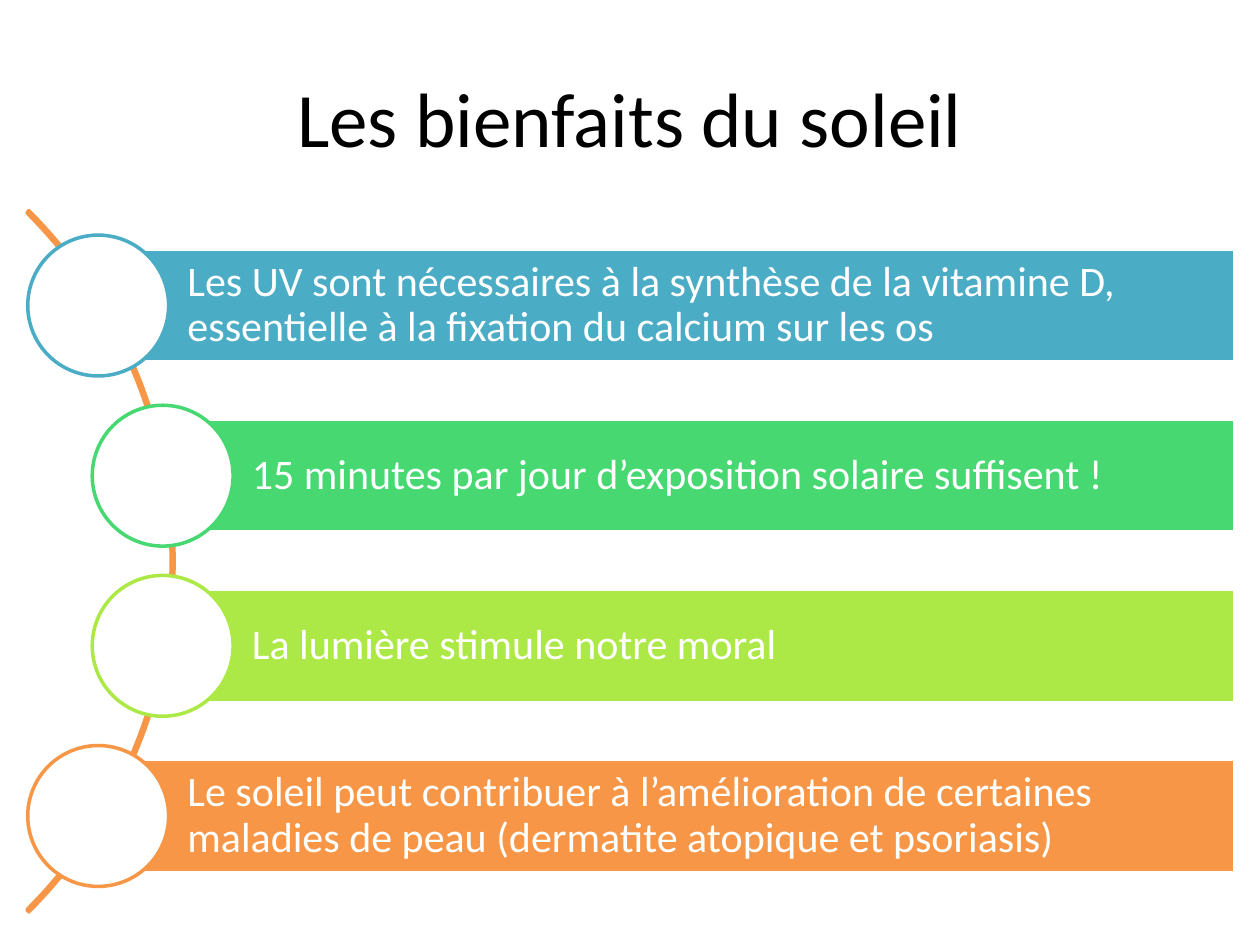
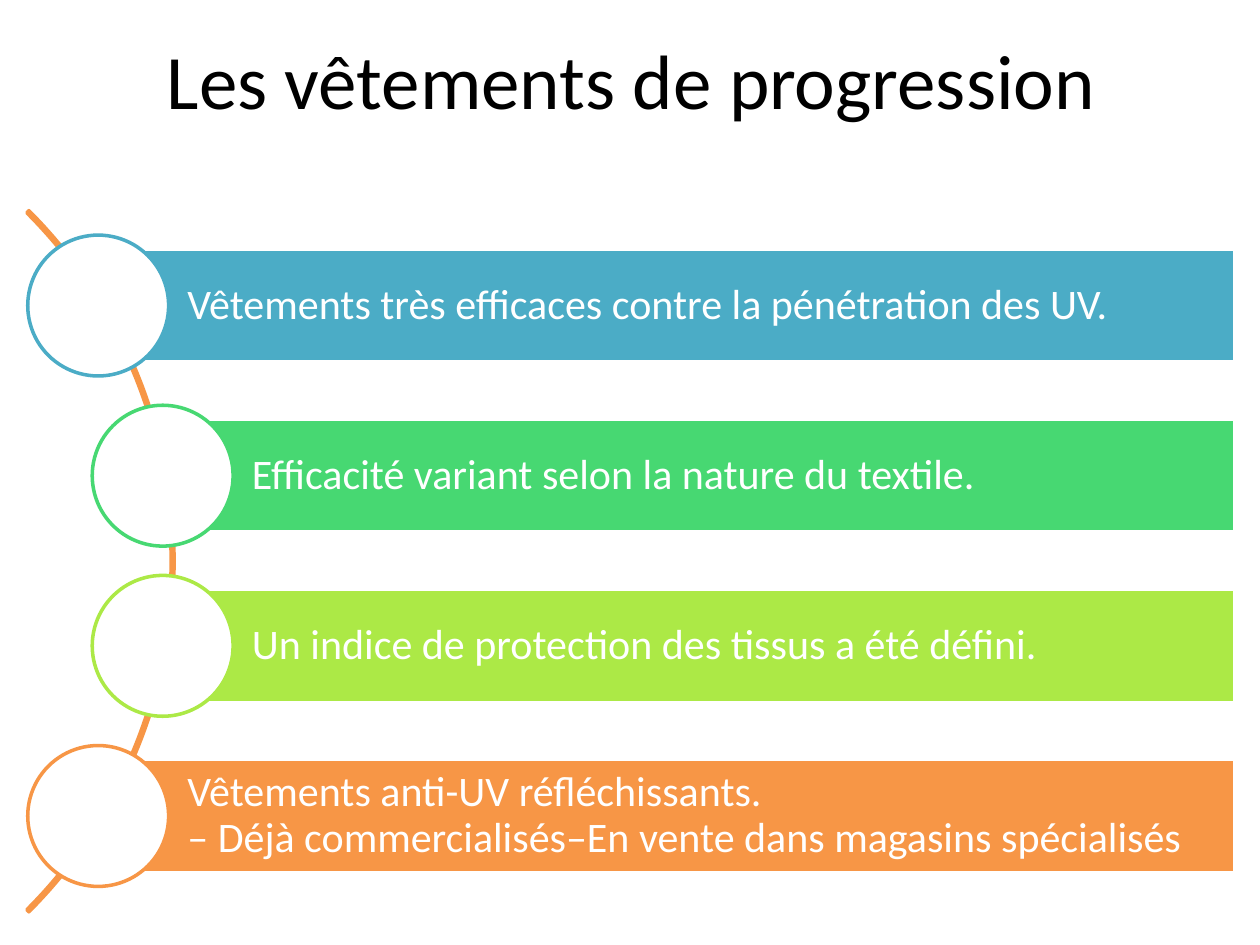
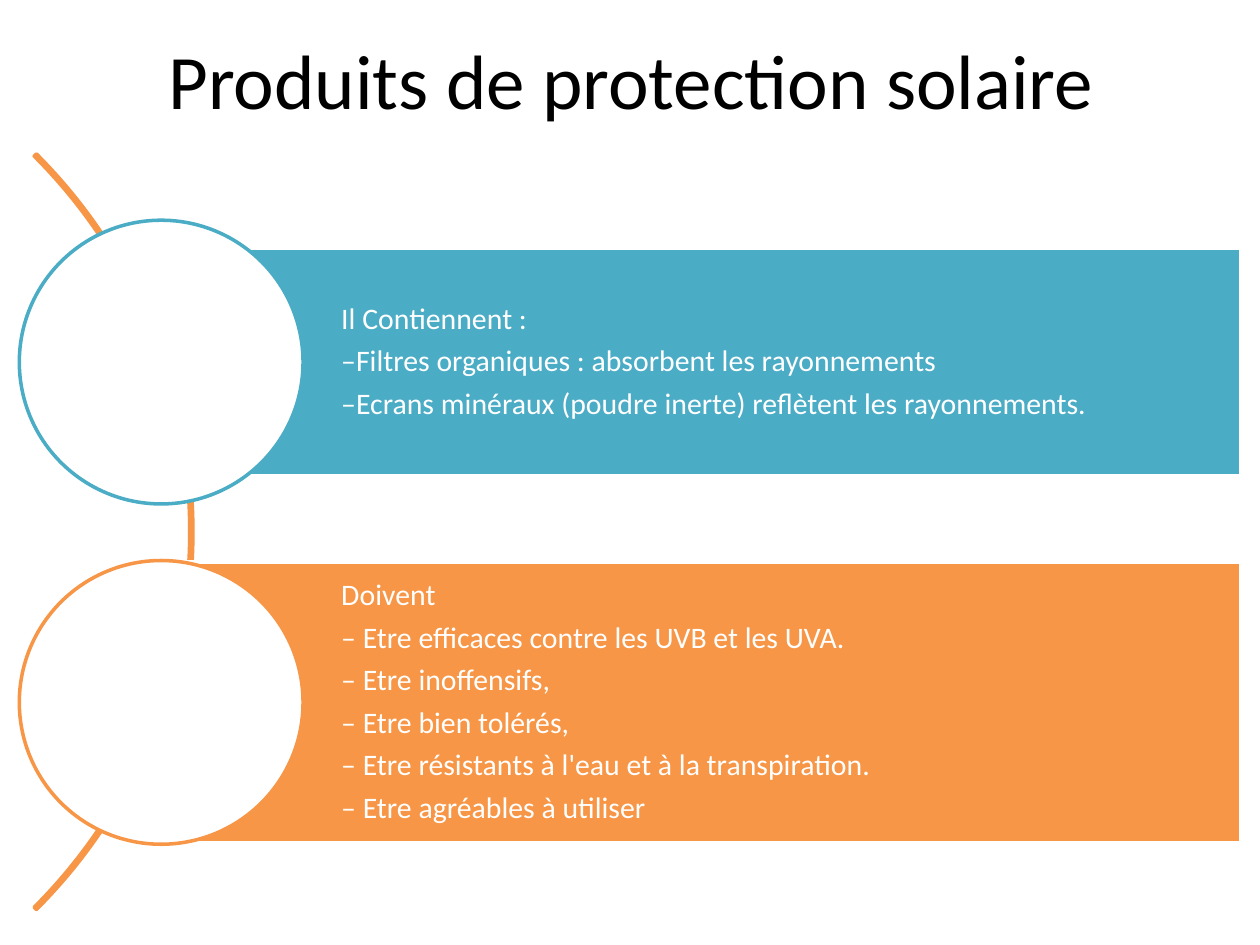
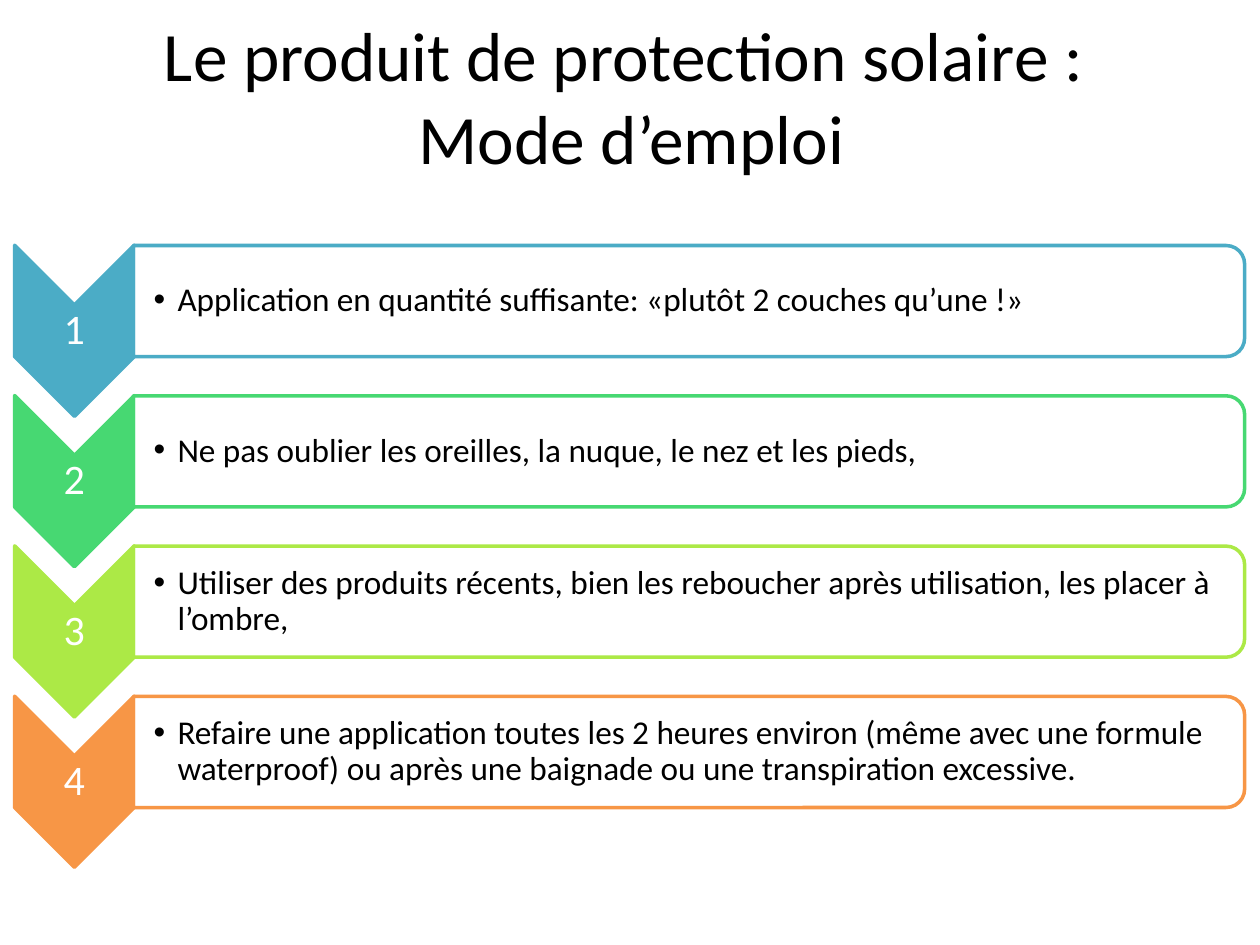
from lxml.etree import SubElement
from pptx import Presentation
from pptx.dml.color import RGBColor
from pptx.enum.shapes import MSO_SHAPE
from pptx.enum.text import MSO_ANCHOR, PP_ALIGN
from pptx.oxml.ns import qn
from pptx.util import Cm, Pt

BLACK = RGBColor(0x00, 0x00, 0x00)
WHITE = RGBColor(0xFF, 0xFF, 0xFF)
BLUE = RGBColor(0x4B, 0xAC, 0xC6)
GREEN = RGBColor(0x47, 0xD8, 0x72)
LIME = RGBColor(0xAC, 0xE9, 0x46)
ORANGE = RGBColor(0xF7, 0x96, 0x46)
HUES = [BLUE, GREEN, LIME, ORANGE]

SIDES = ("margin_left", "margin_top", "margin_right", "margin_bottom")

# Lengths in cm; "mids" are the circle centres across, "tall" the band heights.
FOUR = dict(arc=(-16.48, 1.32, 19.99), disc=2.84, mids=[1.98, 3.28, 3.28, 1.98],
            top=6.16, step=3.43, tall=[2.28] * 4, right=24.89,
            pads=(1.8, 0.18, 0.18, 0.18), size=24, hues=HUES)
TWO = dict(arc=(-17.65, -0.05, 21.54), disc=5.72, mids=[3.25, 3.25],
           top=7.3, step=6.86, tall=[4.57, 5.66], right=25.02,
           pads=(3.63, 0.13, 0.13, 0.13), size=17, hues=[BLUE, ORANGE])

SUN = ["Les UV sont nécessaires à la synthèse de la vitamine D, "
       "essentielle à la fixation du calcium sur les os",
       "15 minutes par jour d’exposition solaire suffisent !",
       "La lumière stimule notre moral",
       "Le soleil peut contribuer à l’amélioration de certaines maladies "
       "de peau (dermatite atopique et psoriasis)"]
CLOTHES = ["Vêtements très efficaces contre la pénétration des UV.",
           "Efficacité variant selon la nature du textile.",
           "Un indice de protection des tissus a été défini.",
           "Vêtements anti-UV réfléchissants.\n"
           "– Déjà commercialisés–En vente dans magasins spécialisés"]
CREAMS = [["Il Contiennent :",
           "–Filtres organiques : absorbent les rayonnements",
           "–Ecrans minéraux (poudre inerte) reflètent les rayonnements."],
          ["Doivent",
           "– Etre efficaces contre les UVB et les UVA.",
           "– Etre inoffensifs,",
           "– Etre bien tolérés,",
           "– Etre résistants à l'eau et à la transpiration.",
           "– Etre agréables à utiliser"]]
STEPS = ["Application en quantité suffisante: «plutôt 2 couches qu’une !»",
         "Ne pas oublier les oreilles, la nuque, le nez et les pieds,",
         "Utiliser des produits récents, bien les reboucher après utilisation, "
         "les placer à l’ombre,",
         "Refaire une application toutes les 2 heures environ (même avec une "
         "formule waterproof) ou après une baignade ou une transpiration "
         "excessive."]


def put(item, values):
    for name, value in values.items():
        setattr(item, name, value)


def around(x, y, wide, high):
    """Return the box of the given size centred on x, y."""
    return [Cm(v) for v in (x - wide / 2, y - high / 2, wide, high)]


class Deck:
    font = "Calibri"

    def __init__(self):
        self.prs = Presentation()
        put(self.prs, dict(slide_width=Cm(25.4), slide_height=Cm(19.05)))

    def start(self, title, left, top, size=44):
        self.slide = self.prs.slides.add_slide(self.prs.slide_layouts[5])
        head = self.slide.shapes.title
        put(head, dict(left=Cm(left), top=Cm(top), width=Cm(22.86), height=Cm(3.18)))
        self.words(head, [title], size, BLACK, align=PP_ALIGN.CENTER)

    def words(self, shape, lines, size, color, pads=None, align=None, **form):
        frame = shape.text_frame
        put(frame, dict(word_wrap=True, vertical_anchor=MSO_ANCHOR.MIDDLE))
        if pads:
            put(frame, dict(zip(SIDES, map(Cm, pads))))
        for i, line in enumerate(lines):
            para = frame.add_paragraph() if i else frame.paragraphs[0]
            para.text = line
            put(para, dict(form, alignment=align))
            for run in para.runs:
                put(run.font, dict(name=self.font, size=Pt(size)))
                run.font.color.rgb = color

    def shape(self, kind, box, fill, line, turn=0):
        item = self.slide.shapes.add_shape(kind, *box)
        item.rotation = turn
        item.shadow.inherit = False
        if fill is None:
            item.fill.background()
        else:
            item.fill.solid()
            item.fill.fore_color.rgb = fill
        item.line.color.rgb = line
        item.line.width = Pt(2)
        return item

    def label(self, box, text, size, color, pads, **form):
        item = self.slide.shapes.add_textbox(*box)
        self.words(item, [text], size, color, pads, line_spacing=0.9, **form)
        return item

    def arc(self, left, top, size):
        box = [Cm(v) for v in (left, top, size, size)]
        item = self.shape(MSO_SHAPE.BLOCK_ARC, box, None, ORANGE)
        for i, value in enumerate((189, 27, 0.003)):
            item.adjustments[i] = value

    def band(self, box, lines, hue, pads, size):
        item = self.shape(MSO_SHAPE.RECTANGLE, box, hue, WHITE)
        self.words(item, lines, size, WHITE, pads, align=PP_ALIGN.LEFT,
                   line_spacing=0.9, space_after=Pt(0.35 * size))

    def curve(self, rows, plan):
        """Draw bands whose circles sit along an arc."""
        self.arc(*plan["arc"])
        disc = plan["disc"]
        parts = zip(rows, plan["mids"], plan["tall"], plan["hues"])
        for i, (lines, mid, high, hue) in enumerate(parts):
            y = plan["top"] + i * plan["step"]
            wide = plan["right"] - mid
            box = around(mid + wide / 2, y, wide, high)
            self.band(box, lines, hue, plan["pads"], plan["size"])
            self.shape(MSO_SHAPE.OVAL, around(mid, y, disc, disc), WHITE, hue)

    def bullet(self, item):
        props = item.text_frame.paragraphs[0]._p.get_or_add_pPr()
        for name, value in dict(marL=Cm(0.48), indent=-Cm(0.48)).items():
            props.set(name, str(int(value)))
        SubElement(props, qn("a:buFont"), typeface="Arial")
        SubElement(props, qn("a:buChar"), char="•")

    def stage(self, num, text, hue):
        """Draw one numbered chevron with its framed line of text."""
        drop = 3.03 * (num - 1)
        low, mid = 6.67 + drop, 6.07 + drop
        self.shape(MSO_SHAPE.CHEVRON, around(1.5, low, 3.45, 2.41), hue, hue, 90)
        self.label(around(1.5, low, 2.41, 1.04), str(num), 24, WHITE, [0.05] * 4,
                   align=PP_ALIGN.CENTER, space_after=Pt(8.4))
        frame = self.shape(MSO_SHAPE.ROUND_2_SAME_RECTANGLE,
                           around(13.89, mid, 2.24, 22.4), WHITE, hue, 90)
        tint = frame._element.spPr.find(qn("a:solidFill"))[0]
        SubElement(tint, qn("a:alpha"), val="90000")
        item = self.label(around(13.86, mid, 22.28, 2.03), text, 19, BLACK,
                          (0.38, 0.03, 0.03, 0.03), level=1, space_after=Pt(2.85))
        self.bullet(item)


def main():
    deck = Deck()
    deck.start("Les bienfaits du soleil", 1.27, 0.76)
    deck.curve([[text] for text in SUN], FOUR)
    deck.start("Les vêtements de progression", 1.3, 0)
    deck.curve([[text] for text in CLOTHES], FOUR)
    deck.start("Produits de protection solaire", 1.3, 0)
    deck.curve(CREAMS, TWO)
    deck.start("Le produit de protection solaire : \nMode d’emploi", 1.3, 0.33, 39.6)
    for num, (text, hue) in enumerate(zip(STEPS, HUES), 1):
        deck.stage(num, text, hue)
    deck.prs.save("out.pptx")


if __name__ == "__main__":
    main()
